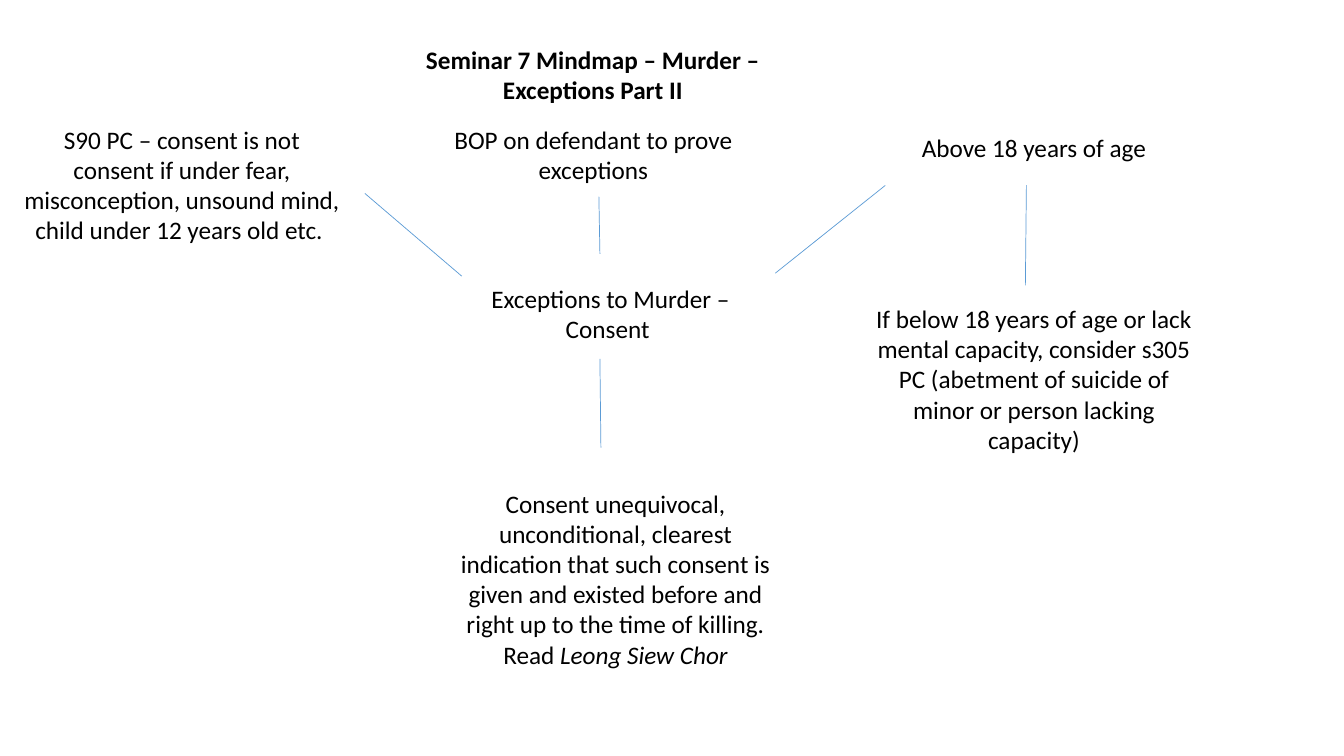
from pptx import Presentation
from pptx import util as u
from pptx.dml.color import RGBColor
from pptx.enum import shapes, text
from pptx.oxml import parse_xml
from pptx.oxml.ns import nsdecls

EMU_PER_PX = 9144  # 100 px to the inch


def px(length):
    return u.Emu(length * EMU_PER_PX)


def colour(hex_string):
    return RGBColor.from_string(hex_string)


class Mindmap:
    font = "Calibri"
    size = 18
    ink = "000000"
    branch_colour = "5B9BD5"
    branch_width = 0.5

    def __init__(self, slide):
        self.slide = slide

    def add_words(self, shape, runs, bold=False):
        """Fill a shape with one centred paragraph of (words, italic) runs."""
        frame = shape.text_frame
        frame.word_wrap = True
        frame.vertical_anchor = text.MSO_ANCHOR.TOP
        frame.auto_size = text.MSO_AUTO_SIZE.SHAPE_TO_FIT_TEXT
        paragraph = frame.paragraphs[0]
        paragraph.alignment = text.PP_ALIGN.CENTER
        for words, italic in runs:
            run = paragraph.add_run()
            run.text = words
            run.font.name = self.font
            run.font.size = u.Pt(self.size)
            run.font.bold = bold
            run.font.italic = italic
            run.font.color.rgb = colour(self.ink)

    def title(self, left, top, width, height, words):
        heading = self.slide.shapes.title
        heading.left, heading.top = px(left), px(top)
        heading.width, heading.height = px(width), px(height)
        self.add_words(heading, [(words, False)], bold=True)

    def idea(self, left, top, height, words, case=""):
        """Add a text box, with an optional case name in italics at its end."""
        box = self.slide.shapes.add_textbox(px(left), px(top), px(333), px(height))
        runs = [(words, False)]
        if case:
            runs.append((case, True))
        self.add_words(box, runs)

    def branch(self, x1, y1, x2, y2):
        line = self.slide.shapes.add_connector(
            shapes.MSO_CONNECTOR.STRAIGHT, px(x1), px(y1), px(x2), px(y2))
        line.line.color.rgb = colour(self.branch_colour)
        line.line.width = u.Pt(self.branch_width)
        line._element.spPr.append(parse_xml(f"<a:effectLst {nsdecls('a')}/>"))


def main():
    deck = Presentation()
    deck.slide_width, deck.slide_height = px(1333), px(750)
    title_only = deck.slide_layouts[5]
    mindmap = Mindmap(deck.slides.add_slide(title_only))

    mindmap.title(400, 39, 376, 71, "Seminar 7 Mindmap – Murder – Exceptions Part II")

    mindmap.idea(439, 276, 71, "Exceptions to Murder – Consent ")
    mindmap.idea(444, 479, 192,
                 "Consent unequivocal, unconditional, clearest indication that such "
                 "consent is given and existed before and right up to the time of "
                 "killing. Read ", case="Leong Siew Chor")
    mindmap.idea(422, 118, 71, "BOP on defendant to prove exceptions")
    mindmap.idea(14, 118, 162,
                 "S90 PC – consent is not consent if under fear, misconception, "
                 "unsound mind, child under 12 years old etc. ")
    mindmap.idea(859, 126, 40, "Above 18 years of age")
    mindmap.idea(859, 296, 162,
                 "If below 18 years of age or lack mental capacity, consider s305 PC "
                 "(abetment of suicide of minor or person lacking capacity)")

    for ends in [
        (595, 252, 594, 195),    # consent to burden of proof
        (596, 444, 595, 356),    # clear consent to consent
        (458, 274, 362, 192),    # consent to s90
        (769, 271, 878, 184),    # consent to age
        (1017, 283, 1018, 184),  # below 18 to above 18
    ]:
        mindmap.branch(*ends)

    deck.save("out.pptx")


if __name__ == "__main__":
    main()
